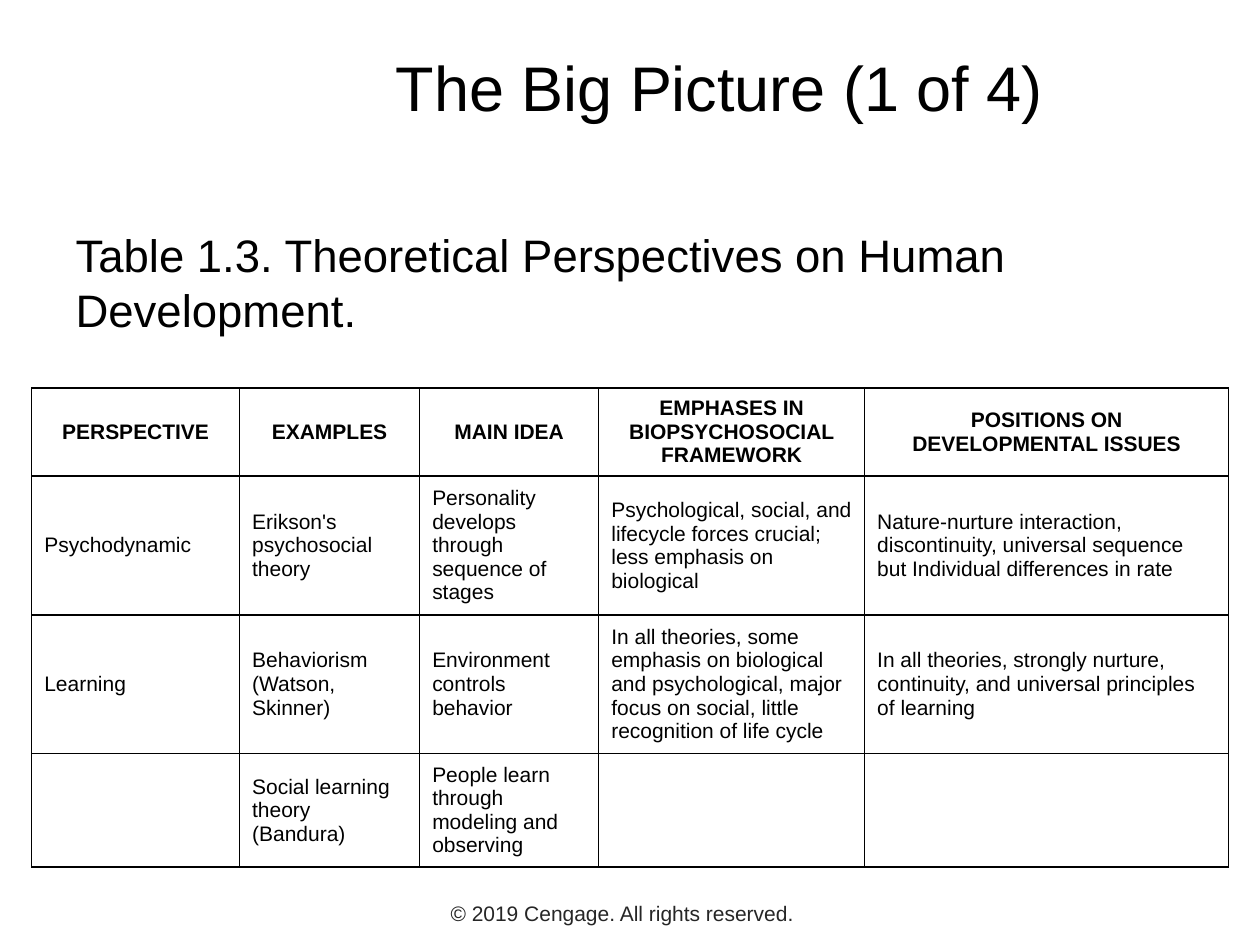
"""Build the slide on theoretical perspectives on human development."""
from dataclasses import dataclass

from lxml import etree
from pptx import Presentation
from pptx.dml.color import RGBColor
from pptx.enum import text
from pptx.oxml import ns
from pptx.util import Cm, Pt


@dataclass(frozen=True)
class Theme:
    font: str = "Arial"
    ink: str = "000000"
    footer_ink: str = "262626"
    title_size: int = 36
    body_size: int = 26
    small_size: int = 12
    border_width: int = 1


@dataclass(frozen=True)
class Box:
    left: float
    top: float
    width: float
    height: float

    def lengths(self) -> tuple:
        return Cm(self.left), Cm(self.top), Cm(self.width), Cm(self.height)


@dataclass(frozen=True)
class Perspective:
    name: str
    examples: str
    main_idea: str
    emphases: str
    positions: str

    def values(self) -> list[str]:
        return [self.name, self.examples, self.main_idea, self.emphases, self.positions]


THEME = Theme()
TITLE_BOX = Box(4.88, 0.64, 19.25, 2.21)
BODY_BOX = Box(1.27, 4.45, 22.86, 2.54)
TABLE_BOX = Box(0.64, 7.82, 24.13, 8.1)
FOOTER_BOX = Box(3.53, 18.03, 18.03, 0.76)
COLUMN_WIDTHS = (4.19, 3.63, 3.61, 5.36, 7.34)
ROW_HEIGHTS = (1.7, 2.46, 2.62, 1.32)
ROWS = (
    Perspective("PERSPECTIVE", "EXAMPLES", "MAIN IDEA",
                "EMPHASES IN BIOPSYCHOSOCIAL FRAMEWORK",
                "POSITIONS ON DEVELOPMENTAL ISSUES"),
    Perspective("Psychodynamic", "Erikson's psychosocial theory",
                "Personality develops through sequence of stages",
                "Psychological, social, and lifecycle forces crucial; "
                "less emphasis on biological",
                "Nature-nurture interaction, discontinuity, universal sequence "
                "but Individual differences in rate"),
    Perspective("Learning", "Behaviorism (Watson, Skinner)",
                "Environment controls behavior",
                "In all theories, some emphasis on biological and psychological, "
                "major focus on social, little recognition of life cycle",
                "In all theories, strongly nurture, continuity, "
                "and universal principles of learning"),
    Perspective("", "Social learning theory (Bandura)",
                "People learn through modeling and observing", "", ""),
)


def write(text_frame, words: str, size: int, align, color: str = THEME.ink,
          bold: bool = False) -> None:
    """Set the text of a frame and format its only paragraph."""
    text_frame.text = words
    paragraph = text_frame.paragraphs[0]
    paragraph.alignment = align
    for run in paragraph.runs:
        run.font.name = THEME.font
        run.font.size = Pt(size)
        run.font.bold = bold
        run.font.color.rgb = RGBColor.from_string(color)


def place(shape, box: Box) -> None:
    """Move and size a shape to a box."""
    shape.left, shape.top, shape.width, shape.height = box.lengths()


def add_title(slide) -> None:
    """Fill the title placeholder."""
    title = slide.shapes.title
    place(title, TITLE_BOX)
    title.text_frame.vertical_anchor = text.MSO_ANCHOR.MIDDLE
    write(title.text_frame, "The Big Picture (1 of 4)", THEME.title_size,
          text.PP_ALIGN.CENTER)


def add_body(slide) -> None:
    """Fill the body placeholder with the unbulleted caption."""
    body = slide.placeholders[1]
    place(body, BODY_BOX)
    write(body.text_frame, "Table 1.3. Theoretical Perspectives on Human Development.",
          THEME.body_size, text.PP_ALIGN.LEFT)
    paragraph = body.text_frame.paragraphs[0]
    paragraph.space_before = Pt(0)
    properties = paragraph._p.get_or_add_pPr()
    properties.set("marL", "0")
    properties.set("indent", "0")
    etree.SubElement(properties, ns.qn("a:buNone"))


def add_borders(cell) -> None:
    """Draw a solid line on all four sides of a cell."""
    properties = cell._tc.get_or_add_tcPr()
    for position, side in enumerate(("lnL", "lnR", "lnT", "lnB")):
        line = etree.Element(ns.qn(f"a:{side}"), w=str(Pt(THEME.border_width)))
        fill = etree.SubElement(line, ns.qn("a:solidFill"))
        etree.SubElement(fill, ns.qn("a:srgbClr"), val=THEME.ink)
        properties.insert(position, line)


def add_perspectives(slide) -> None:
    """Add the bordered table of perspectives."""
    table = slide.shapes.add_table(len(ROWS), len(COLUMN_WIDTHS),
                                   *TABLE_BOX.lengths()).table
    table.first_row = table.horz_banding = False
    for column, width in zip(table.columns, COLUMN_WIDTHS):
        column.width = Cm(width)
    for row_index, (row, height, perspective) in enumerate(
            zip(table.rows, ROW_HEIGHTS, ROWS)):
        row.height = Cm(height)
        is_header = row_index == 0
        align = text.PP_ALIGN.CENTER if is_header else text.PP_ALIGN.LEFT
        for cell, words in zip(row.cells, perspective.values()):
            cell.fill.background()
            cell.vertical_anchor = text.MSO_ANCHOR.MIDDLE
            write(cell.text_frame, words, THEME.small_size, align, bold=is_header)
            add_borders(cell)


def add_footer(slide) -> None:
    """Add the copyright line."""
    footer = slide.shapes.add_textbox(*FOOTER_BOX.lengths())
    footer.text_frame.word_wrap = True
    write(footer.text_frame, "© 2019 Cengage. All rights reserved.",
          THEME.small_size, text.PP_ALIGN.CENTER, THEME.footer_ink)


def main() -> None:
    """Build and save the presentation."""
    presentation = Presentation()
    presentation.slide_width, presentation.slide_height = Cm(25.4), Cm(19.05)
    slide = presentation.slides.add_slide(presentation.slide_layouts[1])
    add_footer(slide)
    add_title(slide)
    add_body(slide)
    add_perspectives(slide)
    presentation.save("out.pptx")


if __name__ == "__main__":
    main()
